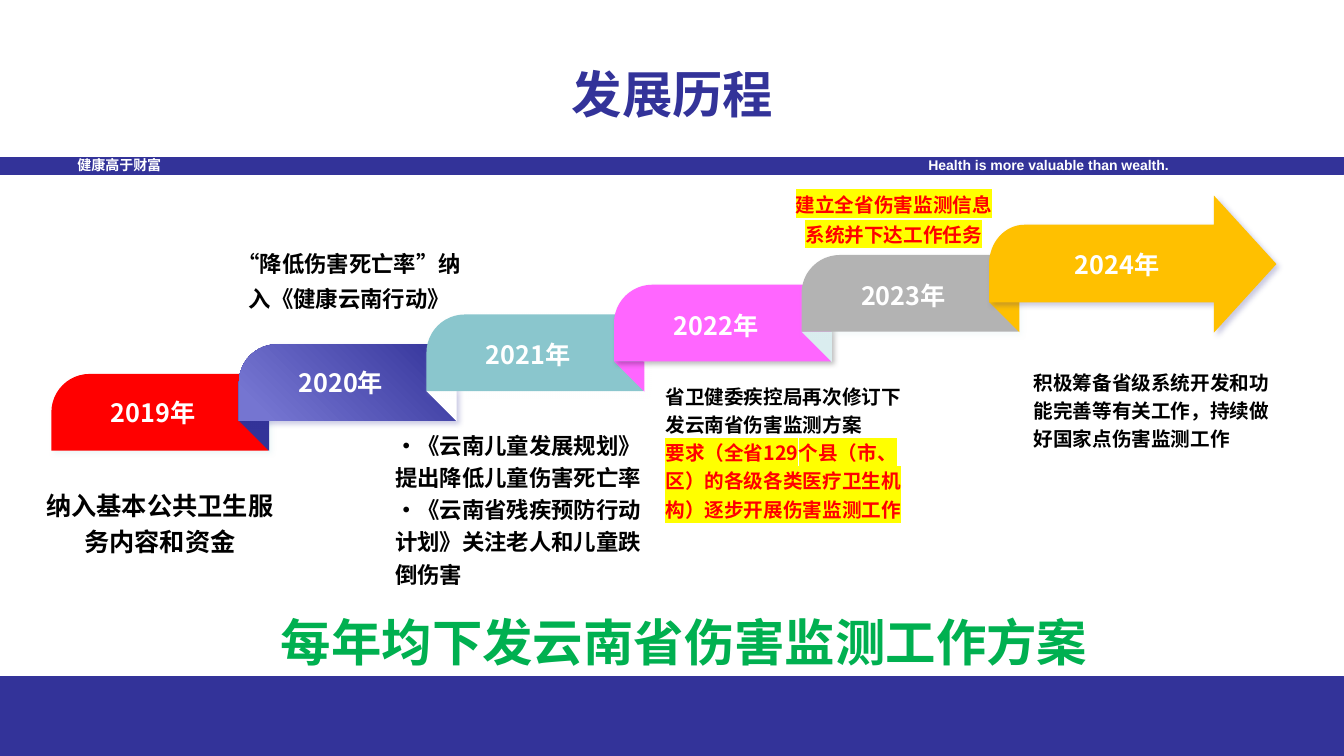
from dataclasses import dataclass
from math import cos, pi, sin

from lxml import etree
from pptx import Presentation
from pptx.dml.color import RGBColor
from pptx.enum.shapes import MSO_SHAPE
from pptx.enum.text import MSO_ANCHOR, PP_ALIGN
from pptx.oxml.ns import qn
from pptx.util import Inches, Pt

RECT = MSO_SHAPE.RECTANGLE
TAB = MSO_SHAPE.ROUND_1_RECTANGLE
FOLD = MSO_SHAPE.RIGHT_TRIANGLE
LEFT, CENTER = PP_ALIGN.LEFT, PP_ALIGN.CENTER
TOP, MIDDLE, BOTTOM = MSO_ANCHOR.TOP, MSO_ANCHOR.MIDDLE, MSO_ANCHOR.BOTTOM


@dataclass(frozen=True)
class Theme:
    latin: str = "Arial"
    cjk: str = "Noto Sans CJK SC"
    navy: str = "333399"
    violet: str = "7575D1"
    white: str = "FFFFFF"
    black: str = "000000"
    red: str = "FF0000"
    teal: str = "8AC6CD"
    mist: str = "DAEDEF"
    pale_teal: str = "BBE0E3"
    pink: str = "FF66FF"
    grey: str = "B3B3B3"
    amber: str = "FFC000"
    indigo: str = "2D2D8A"
    green: str = "00B050"
    marker: str = "FFFF00"
    headline: int = 36
    year: int = 18
    large: int = 18
    medium: int = 16
    small: int = 14
    motto: int = 10


THEME = Theme()
TAB_WIDTH, TAB_HEIGHT, FOLD_SIZE = 2.15, 0.76, 0.3


def rgb(value):
    return RGBColor.from_string(value)


def write(frame, paragraphs, size, color, align=LEFT, spacing=None,
          anchor=TOP, insets=(0, 0, 0, 0), font=THEME.cjk):
    frame.word_wrap = True
    frame.vertical_anchor = anchor
    (frame.margin_left, frame.margin_top,
     frame.margin_right, frame.margin_bottom) = map(Inches, insets)
    for index, content in enumerate(paragraphs):
        paragraph = frame.paragraphs[0] if index == 0 else frame.add_paragraph()
        paragraph.add_run().text = content
        paragraph.alignment = align
        if spacing:
            paragraph.line_spacing = spacing
        paragraph.font.size = Pt(size)
        paragraph.font.bold = True
        paragraph.font.color.rgb = rgb(color)
        paragraph.font.name = font
        defaults = paragraph._p.pPr.find(qn("a:defRPr"))
        etree.SubElement(defaults, qn("a:ea"), typeface=THEME.cjk)


def add_text(slide, box, paragraphs, size, color, **style):
    frame = slide.shapes.add_textbox(*map(Inches, box)).text_frame
    write(frame, paragraphs, size, color, **style)
    return frame


def mark(paragraph):
    paragraph.font.color.rgb = rgb(THEME.red)
    properties = paragraph.runs[0]._r.get_or_add_rPr()
    highlight = etree.SubElement(properties, qn("a:highlight"))
    etree.SubElement(highlight, qn("a:srgbClr"), val=THEME.marker)


def paint(shape, color):
    shape.shadow.inherit = False
    shape.fill.solid()
    shape.fill.fore_color.rgb = rgb(color)
    shape.line.fill.background()


def cast_shadow(shape, color):
    effects = shape._element.spPr.find(qn("a:effectLst"))
    shadow = etree.SubElement(effects, qn("a:outerShdw"), blurRad=str(Pt(4)),
                              dist=str(Pt(3)), dir="2700000", rotWithShape="0")
    tint = etree.SubElement(shadow, qn("a:srgbClr"), val=color)
    etree.SubElement(tint, qn("a:alpha"), val="25000")


def add_band(slide, box):
    band = slide.shapes.add_shape(RECT, *map(Inches, box))
    paint(band, THEME.navy)
    band.line.color.rgb = rgb(THEME.navy)
    band.line.width = Pt(0.75)


def add_frame(slide, width, height):
    add_band(slide, (0, 1.56, width, 0.17))
    add_band(slide, (0, height - 0.79, width, 0.79))
    for left, span, motto in ((0.67, 1.89, "健康高于财富"),
                              (9.11, 3.56, "Health is more valuable than wealth.")):
        add_text(slide, (left, 1.5, span, 0.27), [motto], THEME.motto, THEME.white,
                 insets=(0.1, 0.05, 0.1, 0.05), font=THEME.latin)
    add_text(slide, (0.67, 0.3, 12, 1.25), ["发展历程"], THEME.headline, THEME.navy,
             align=CENTER, anchor=MIDDLE, font=THEME.latin)


def add_fold(slide, left, bottom, color):
    fold = slide.shapes.add_shape(FOLD, Inches(left), Inches(bottom),
                                  Inches(FOLD_SIZE), Inches(FOLD_SIZE))
    fold.rotation = 180
    paint(fold, color)


def add_tab(slide, left, top, year, color, shadow, inset_top):
    tab = slide.shapes.add_shape(TAB, Inches(left), Inches(top),
                                 Inches(TAB_WIDTH), Inches(TAB_HEIGHT))
    tab.adjustments[0] = 0.5
    tab._element.spPr.find(qn("a:xfrm")).set("flipH", "1")
    paint(tab, color)
    if color == THEME.navy:
        tab.fill.gradient()
        tab.fill.gradient_angle = 315
        for stop, (position, tone) in zip(tab.fill.gradient_stops,
                                          ((0, THEME.navy), (0.9, THEME.violet))):
            stop.position = position
            stop.color.rgb = rgb(tone)
    cast_shadow(tab, shadow)
    write(tab.text_frame, [year], THEME.year, THEME.white, align=CENTER,
          anchor=MIDDLE, insets=(0.08, inset_top, 0.32, 0.08))


def add_arrow(slide, left, top, year):
    neck, tip, half = left + 2.23, left + 2.85, 0.68
    middle, upper, lower = top + half, top + 0.29, top + 1.06
    radius_x, radius_y = 0.35, middle - upper
    corner = [(left + radius_x * (1 - cos(step * pi / 32)),
               middle - radius_y * sin(step * pi / 32)) for step in range(17)]
    outline = [(tip, middle), (neck, top + 2 * half), (neck, lower),
               (left, lower), *corner, (neck, upper)]
    builder = slide.shapes.build_freeform(Inches(neck), Inches(top))
    builder.add_line_segments([(Inches(x), Inches(y)) for x, y in outline], close=True)
    arrow = builder.convert_to_shape()
    paint(arrow, THEME.amber)
    cast_shadow(arrow, THEME.indigo)
    write(arrow.text_frame, [year], THEME.year, THEME.white, align=CENTER,
          anchor=MIDDLE, insets=(0.08, 0.08, 0.39, 0.08))


def add_timeline(slide, left, first_top, last_top):
    tabs = (("2019年", THEME.red, THEME.pale_teal, 0.08, None),
            ("2020年", THEME.navy, THEME.navy, 0.08, THEME.navy),
            ("2021年", THEME.teal, THEME.white, 0.12, THEME.white),
            ("2022年", THEME.pink, THEME.black, 0.12, THEME.pink),
            ("2023年", THEME.grey, THEME.mist, 0.12, THEME.mist))
    advance = 1.86
    rise = (first_top - last_top) / (len(tabs) - 1)
    for index, (year, color, shadow, inset_top, fold) in enumerate(tabs):
        x, y = left + index * advance, first_top - index * rise
        if fold:
            add_fold(slide, x, y + TAB_HEIGHT, fold)
        add_tab(slide, x, y, year, color, shadow, inset_top)
    end = left + len(tabs) * advance
    add_fold(slide, end, last_top - rise + TAB_HEIGHT, THEME.amber)
    add_arrow(slide, end, last_top - 2 * rise, "2024年")


def add_milestones(slide):
    add_text(slide, (0.46, 4.27, 2.25, 1.25), ["纳入基本公共卫生服务内容和资金"],
             THEME.large, THEME.black, align=CENTER, spacing=1.2, anchor=BOTTOM)
    add_text(slide, (2.34, 2.4, 2.25, 0.9), ["“降低伤害死亡率”纳入《健康云南行动》"],
             THEME.medium, THEME.black, align=CENTER, spacing=1.3)
    add_text(slide, (3.92, 4.46, 2.63, 1.37),
             ["·《云南儿童发展规划》提出降低儿童伤害死亡率",
              "·《云南省残疾预防行动计划》关注老人和儿童跌倒伤害"],
             THEME.medium, THEME.black, spacing=1.2, anchor=BOTTOM)
    revision = add_text(slide, (6.6, 3.71, 2.4, 1.46),
                        ["省卫健委疾控局再次修订下发云南省伤害监测方案",
                         "要求（全省129个县（市、区）的各级各类医疗卫生机构）逐步开展伤害监测工作"],
                        THEME.small, THEME.black, spacing=1.2, anchor=BOTTOM)
    mark(revision.paragraphs[1])
    system = add_text(slide, (7.84, 1.84, 2.05, 0.73),
                      ["建立全省伤害监测信息系统并下达工作任务"],
                      THEME.small, THEME.red, align=CENTER, spacing=1.3)
    mark(system.paragraphs[0])
    add_text(slide, (10.25, 3.22, 2.45, 1.25),
             ["积极筹备省级系统开发和功能完善等有关工作，持续做好国家点伤害监测工作"],
             THEME.small, THEME.black, spacing=1.2, anchor=BOTTOM)
    add_text(slide, (1.76, 5.88, 10.05, 0.87), ["每年均下发云南省伤害监测工作方案"],
             THEME.headline, THEME.green, align=CENTER, spacing=1.3)


def main():
    deck = Presentation()
    deck.slide_width, deck.slide_height = Inches(13.33), Inches(7.5)
    slide = deck.slides.add_slide(deck.slide_layouts[6])
    add_frame(slide, 13.33, 7.5)
    add_timeline(slide, 0.51, 3.71, 2.53)
    add_milestones(slide)
    deck.save("out.pptx")


if __name__ == "__main__":
    main()
